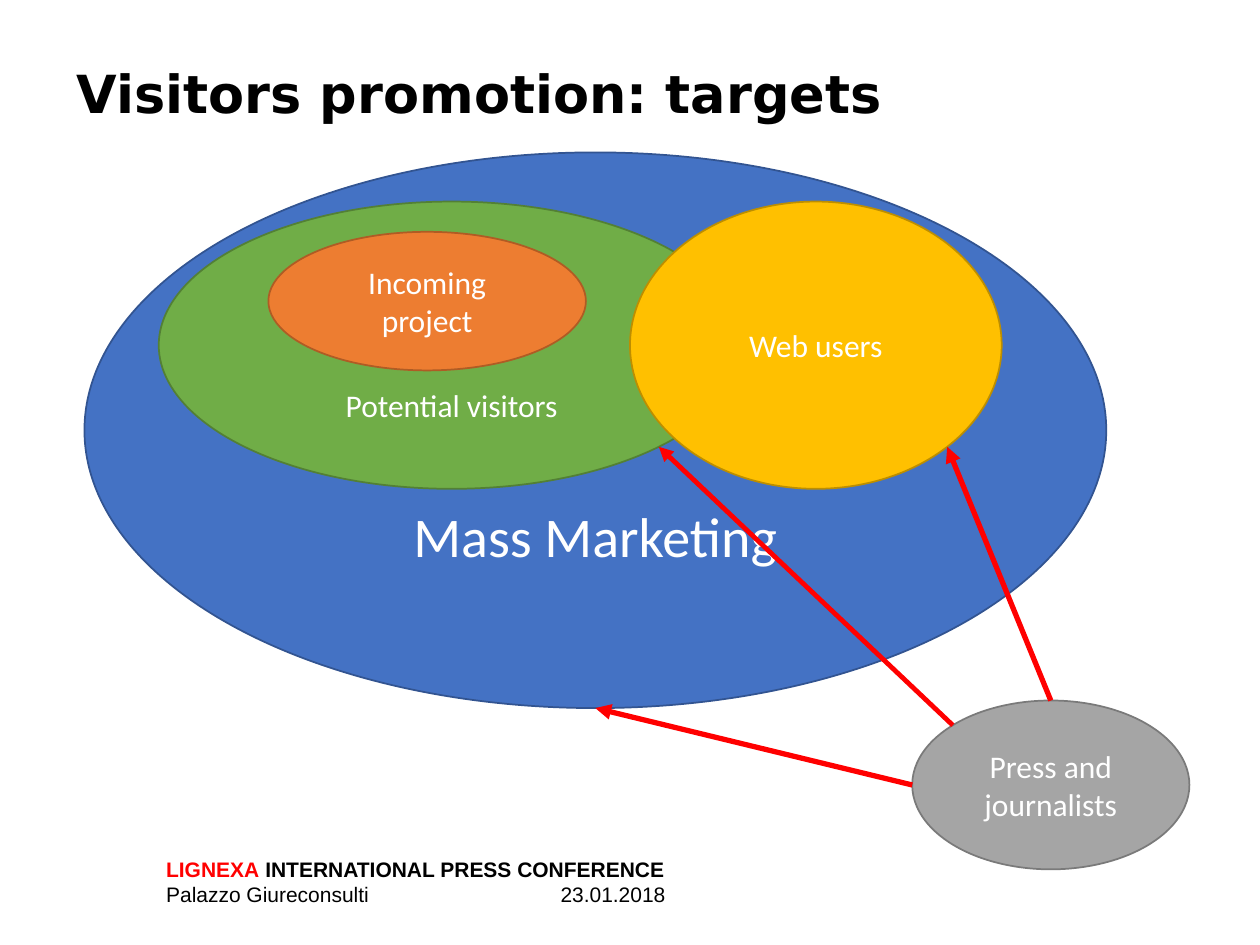
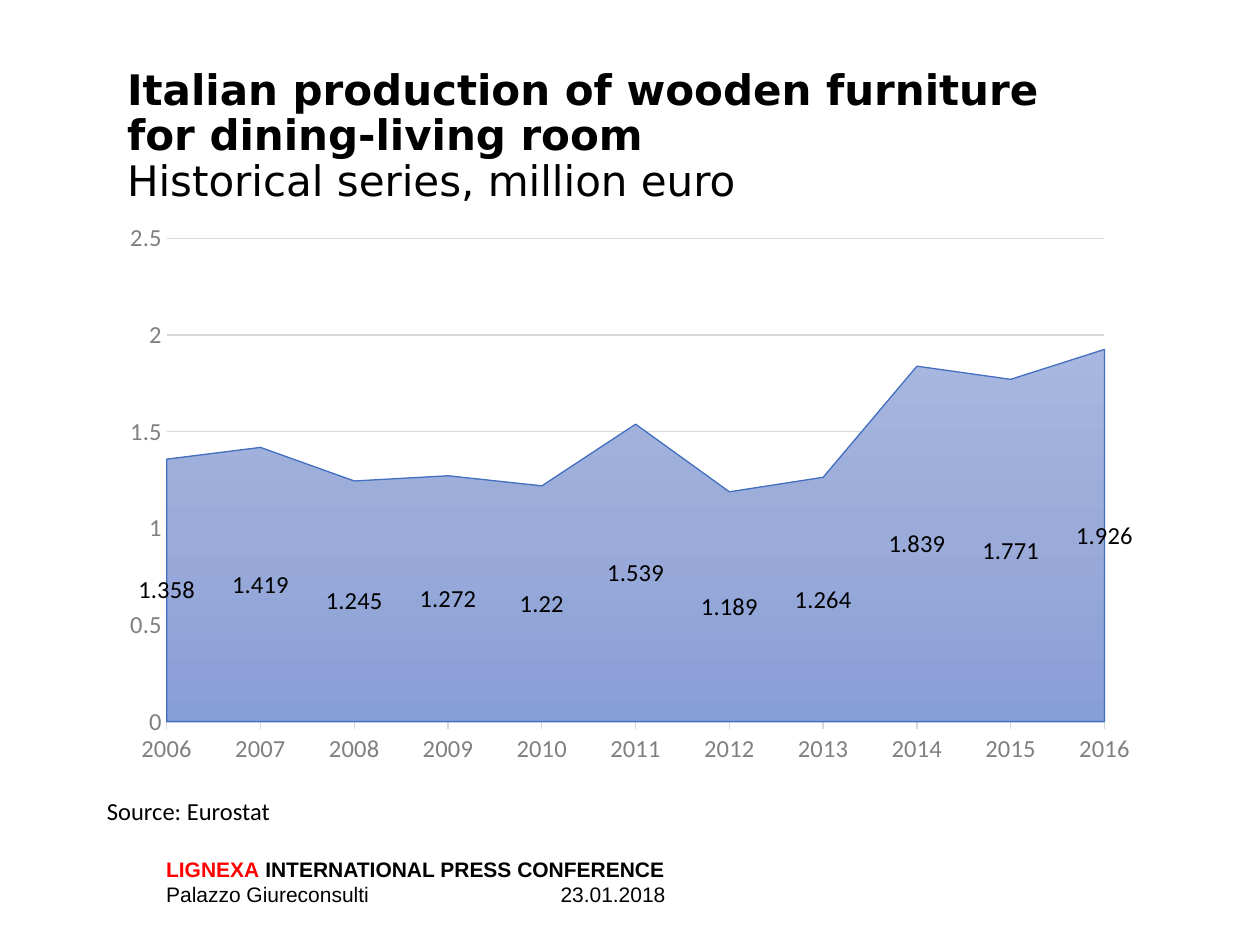
from copy import deepcopy
from math import cos, radians, sin

from lxml.etree import SubElement
from pptx import Presentation
from pptx.chart.data import CategoryChartData
from pptx.dml.color import RGBColor
from pptx.enum.chart import XL_CHART_TYPE, XL_TICK_MARK
from pptx.enum.shapes import MSO_CONNECTOR, MSO_SHAPE
from pptx.enum.text import MSO_ANCHOR, PP_ALIGN
from pptx.oxml import parse_xml
from pptx.oxml.ns import nsdecls, qn
from pptx.util import Inches, Pt

COLORS = {
    "black": "000000", "white": "FFFFFF", "red": "FF0000",
    "blue": "4472C4", "navy": "325491", "gray": "A5A5A5", "slate": "7A7A7A",
    "green": "70AD47", "moss": "538035", "gold": "FFC000", "ochre": "BD8E00",
    "orange": "ED7D31", "rust": "AF5C24", "axis": "808080", "grid": "D9D9D9",
    "edge": "436FC0", "top": "A8B7DF", "middle": "9AABD9", "base": "889ED7",
}
TITLE_FONT = "DejaVu Sans"

RINGS = {
    "mass": ((0, 0, 8.11, 4.41), "blue", "navy", "Mass Marketing", 32, 0.83),
    "press": ((6.57, 4.35, 2.2, 1.34), "gray", "slate", "Press and journalists", 18, 0),
    "visit": ((0.59, 0.39, 4.65, 2.28), "green", "moss", "Potential visitors", 18, 0.47),
    "web": ((4.33, 0.39, 2.95, 2.28), "gold", "ochre", "Web users", 18, 0),
    "guests": ((1.46, 0.63, 2.52, 1.1), "orange", "rust", "Incoming project", 18, 0),
}
ARROWS = [("press", 225, "visit", 45, 2.75), ("press", 270, "web", 45, 3),
          ("press", 180, "mass", 90, 3)]
OUTPUT = [1.358, 1.419, 1.245, 1.272, 1.22, 1.539, 1.189, 1.264, 1.839, 1.771, 1.926]


def color(name):
    """Return the named colour."""
    return RGBColor.from_string(COLORS[name])


def style(font, size=14, face="Calibri", ink="black", bold=False):
    """Set the look of a font."""
    font.size, font.name, font.bold = Pt(size), face, bold
    font.color.rgb = color(ink)


def write(frame, lines, align=PP_ALIGN.LEFT, spacing=1.0, tab=None, **look):
    """Fill a frame with lines, each a list of (text, changes to the look)."""
    frame.word_wrap = True
    for index, line in enumerate(lines):
        para = frame.add_paragraph() if index else frame.paragraphs[0]
        para.alignment, para.line_spacing = align, spacing
        if tab:
            stops = SubElement(para._p.get_or_add_pPr(), qn("a:tabLst"))
            SubElement(stops, qn("a:tab"), pos=str(Inches(tab)), algn="l")
        for text, change in line:
            run = para.add_run()
            run.text = text
            style(run.font, **{**look, **change})


def label(slide, box, lines, **look):
    """Add a text box."""
    shape = slide.shapes.add_textbox(*map(Inches, box))
    write(shape.text_frame, lines, **look)


def title(slide, box, lines, size):
    """Add the slide title."""
    label(slide, box, lines, spacing=0.9, size=size, face=TITLE_FONT, bold=True)


def footer(slide, box=(1.22, 6.75, 4.65, 0.51)):
    """Add the event name, place and date."""
    lines = [[("LIGNEXA", {"ink": "red"}), (" INTERNATIONAL PRESS CONFERENCE", {})],
             [("Palazzo Giureconsulti\t23.01.2018", {"bold": False})]]
    label(slide, box, lines, tab=3.13, size=12, face="Arial", bold=True)


def ring(slide, box, fill, edge, text, size, drop):
    """Add a labelled ellipse, its text lowered by drop."""
    shape = slide.shapes.add_shape(MSO_SHAPE.OVAL, *map(Inches, box))
    shape.shadow.inherit = False
    shape.fill.solid()
    shape.fill.fore_color.rgb = color(fill)
    shape.line.color.rgb = color(edge)
    shape.line.width = Pt(1)
    frame = shape.text_frame
    frame.vertical_anchor = MSO_ANCHOR.MIDDLE
    frame.margin_top = Inches(0.05 + 2 * drop)
    write(frame, [[(text, {})]], align=PP_ALIGN.CENTER, size=size, ink="white")


def rim(box, angle):
    """Return the point of an ellipse at a clockwise angle from the right."""
    left, top, width, height = box
    turn = radians(angle)
    return left + width / 2 * (1 + cos(turn)), top + height / 2 * (1 + sin(turn))


def arrow(slide, start, end, weight):
    """Draw a red arrow between two points."""
    line = slide.shapes.add_connector(MSO_CONNECTOR.STRAIGHT, *map(Inches, start + end))
    line.line.color.rgb = color("red")
    line.line.width = Pt(weight)
    props = line._element.spPr
    SubElement(props.find(qn("a:ln")), qn("a:tailEnd"), type="triangle")
    SubElement(props, qn("a:effectLst"))


def diagram(slide, box):
    """Draw the target groups and the arrows from the press."""
    spots = {}
    for name, (area, *rest) in RINGS.items():
        spots[name] = (box[0] + area[0], box[1] + area[1], *area[2:])
        ring(slide, spots[name], *rest)
    for source, leave, target, reach, weight in ARROWS:
        arrow(slide, rim(spots[source], leave), rim(spots[target], reach), weight)


def layout(chart, **parts):
    """Fix the inner plot area as fractions of the chart."""
    plot = chart._chartSpace.chart.plotArea
    for old in plot.findall(qn("c:layout")):
        plot.remove(old)
    new = parse_xml(f"<c:layout {nsdecls('c')}><c:manualLayout/></c:layout>")
    for tag, value in {"layoutTarget": "inner", "xMode": "edge", "yMode": "edge",
                       **parts}.items():
        SubElement(new[0], qn(f"c:{tag}"), val=str(value))
    plot.insert(0, new)


def shade(series):
    """Give the area its gradient and outline."""
    fill = series.format.fill
    fill.gradient()
    fill.gradient_angle = 270
    first = series._element.xpath(".//a:gs")[0]
    first.addnext(deepcopy(first))
    for stop, place, name in zip(fill.gradient_stops, (0, 0.5, 1), ("top", "middle", "base")):
        stop.position = place
        stop.color.rgb = color(name)
    series.format.line.color.rgb = color("edge")
    series.format.line.width = Pt(0.75)


def graph(slide, box):
    """Draw the yearly production as an area chart."""
    data = CategoryChartData()
    data.categories = [str(2006 + index) for index in range(len(OUTPUT))]
    data.add_series("Series 1", OUTPUT)
    chart = slide.shapes.add_chart(XL_CHART_TYPE.AREA_STACKED, *map(Inches, box), data).chart
    chart.has_legend = chart.has_title = False
    style(chart.font, size=10)
    layout(chart, x=0.05, y=0.05, w=0.9, h=0.86)
    shade(chart.plots[0].series[0])
    marks = chart.plots[0].series[0].data_labels
    marks.show_value = True
    style(marks.font)
    years, scale = chart.category_axis, chart.value_axis
    for axis in (years, scale):
        style(axis.tick_labels.font, ink="axis")
    years.has_major_gridlines = False
    years.major_tick_mark = XL_TICK_MARK.OUTSIDE
    scale.major_tick_mark = XL_TICK_MARK.NONE
    scale.minimum_scale, scale.maximum_scale, scale.major_unit = 0, 2.5, 0.5
    scale.has_major_gridlines = True
    scale.format.line.fill.background()
    for line in (years.format.line, scale.major_gridlines.format.line):
        line.color.rgb = color("grid")
        line.width = Pt(0.75)
    for cross in chart._chartSpace.xpath(".//c:crossBetween"):
        cross.set("val", "midCat")


def targets(slide):
    """Build the slide on visitor targets."""
    title(slide, (0.51, 0.49, 9.37, 1.45), [[("Visitors promotion: targets", {})]], 30)
    diagram(slide, (0.67, 1.21))


def trend(slide):
    """Build the slide on furniture production."""
    lines = [[("Italian production of wooden furniture", {})],
             [("for dining-living room", {})],
             [("Historical series, million euro", {"bold": False})]]
    title(slide, (0.91, 0.5, 8.98, 1.21), lines, 24)
    graph(slide, (0.91, 1.67, 8.27, 4.46))
    label(slide, (0.75, 6.27, 5.75, 0.34), [[("Source: Eurostat", {})]])


def main():
    """Build and save the slides."""
    deck = Presentation()
    deck.slide_width, deck.slide_height = Inches(10), Inches(7.5)
    for build in (targets, trend):
        slide = deck.slides.add_slide(deck.slide_layouts[6])
        footer(slide)
        build(slide)
    deck.save("out.pptx")


if __name__ == "__main__":
    main()
